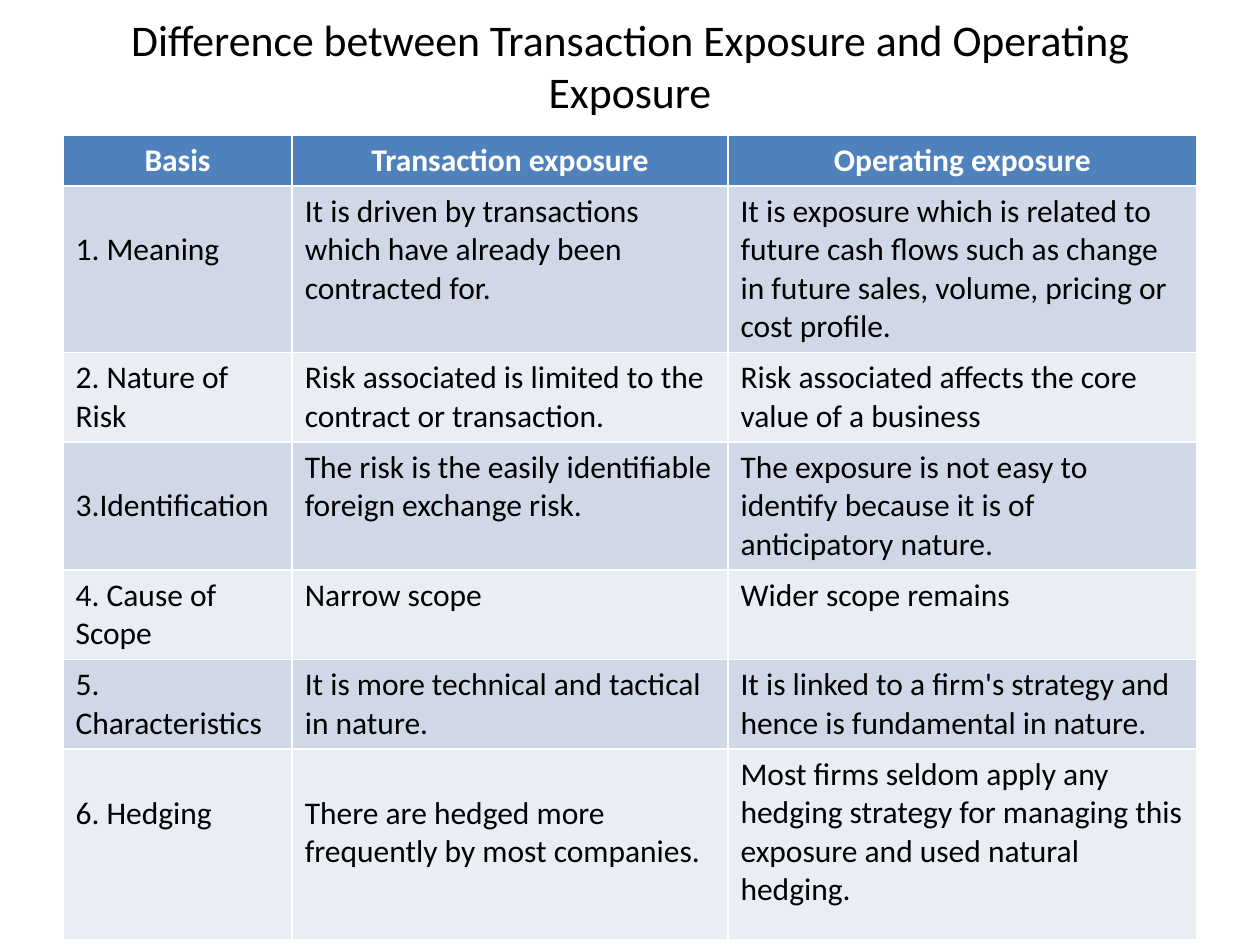
from pptx import Presentation
from pptx.dml.color import RGBColor
from pptx.enum.text import MSO_ANCHOR, MSO_AUTO_SIZE, PP_ALIGN
from pptx.util import Pt

LEFT, CENTER = PP_ALIGN.LEFT, PP_ALIGN.CENTER
MIDDLE, TOP = MSO_ANCHOR.MIDDLE, MSO_ANCHOR.TOP
TITLE_ONLY = 5

# Content
TITLE = "Difference between Transaction Exposure and Operating Exposure"
HEADER = ("Basis", "Transaction exposure", "Operating exposure")
ROWS = [
    ("1. Meaning",
     "It is driven by transactions which have already been contracted for.",
     "It is exposure which is related to future cash flows such as change "
     "in future sales, volume, pricing or cost profile."),
    ("2. Nature of Risk",
     "Risk associated is limited to the contract or transaction.",
     "Risk associated affects the core value of a business"),
    ("3.Identification",
     "The risk is the easily identifiable foreign exchange risk.",
     "The exposure is not easy to identify because it is of anticipatory nature."),
    ("4. Cause of Scope", "Narrow scope", "Wider scope remains"),
    ("5. Characteristics",
     "It is more technical and tactical in nature.",
     "It is linked to a firm's strategy and hence is fundamental in nature."),
    ("6. Hedging",
     "There are hedged more frequently by most companies.",
     "Most firms seldom apply any hedging strategy for managing this "
     "exposure and used natural hedging."),
]
# Cells (row, column) whose text starts one line lower
LOWERED = {(1, 0), (3, 0), (6, 0), (6, 1)}

COLORS = {"header": "4F81BD", "odd": "D0D8E8", "even": "E9EDF4",
          "text": "000000", "header_text": "FFFFFF"}
COLUMN_WIDTHS = (131, 249, 268)
ROW_HEIGHTS = (29, 95, 51, 73, 51, 51, 109)
CELL_MARGIN, LINE_HEIGHT = 3.6, 22


def write(frame, text, size=18, color="text", bold=False, align=LEFT):
    para = frame.paragraphs[0]
    para.alignment = align
    span = para.add_run()
    span.text = text
    span.font.name = "Calibri"
    span.font.size = Pt(size)
    span.font.bold = bold
    span.font.color.rgb = RGBColor.from_string(COLORS[color])


deck = Presentation()
deck.slide_width, deck.slide_height = Pt(720), Pt(540)
page = deck.slides.add_slide(deck.slide_layouts[TITLE_ONLY])

# Title, lifted above the middle of its box by the bottom margin
title = page.shapes.title
title.left, title.top, title.width, title.height = Pt(36), Pt(21.6), Pt(648), Pt(61.2)
frame = title.text_frame
frame.auto_size = MSO_AUTO_SIZE.NONE
frame.word_wrap = True
frame.vertical_anchor = MIDDLE
frame.margin_bottom = Pt(33.6)
write(frame, TITLE, size=25, align=CENTER)

# Comparison table
table = page.shapes.add_table(
    len(ROW_HEIGHTS), len(COLUMN_WIDTHS), Pt(36), Pt(77.2),
    Pt(sum(COLUMN_WIDTHS)), Pt(sum(ROW_HEIGHTS))).table
for column, width in zip(table.columns, COLUMN_WIDTHS):
    column.width = Pt(width)
for row, height in zip(table.rows, ROW_HEIGHTS):
    row.height = Pt(height)

for r, texts in enumerate([HEADER] + ROWS):
    band = "header" if r == 0 else "odd" if r % 2 else "even"
    for c, text in enumerate(texts):
        cell = table.cell(r, c)
        cell.fill.solid()
        cell.fill.fore_color.rgb = RGBColor.from_string(COLORS[band])
        cell.vertical_anchor = TOP
        cell.margin_top = Pt(CELL_MARGIN + LINE_HEIGHT * ((r, c) in LOWERED))
        if r == 0:
            write(cell.text_frame, text, color="header_text", bold=True, align=CENTER)
        else:
            write(cell.text_frame, text)

deck.save("out.pptx")
